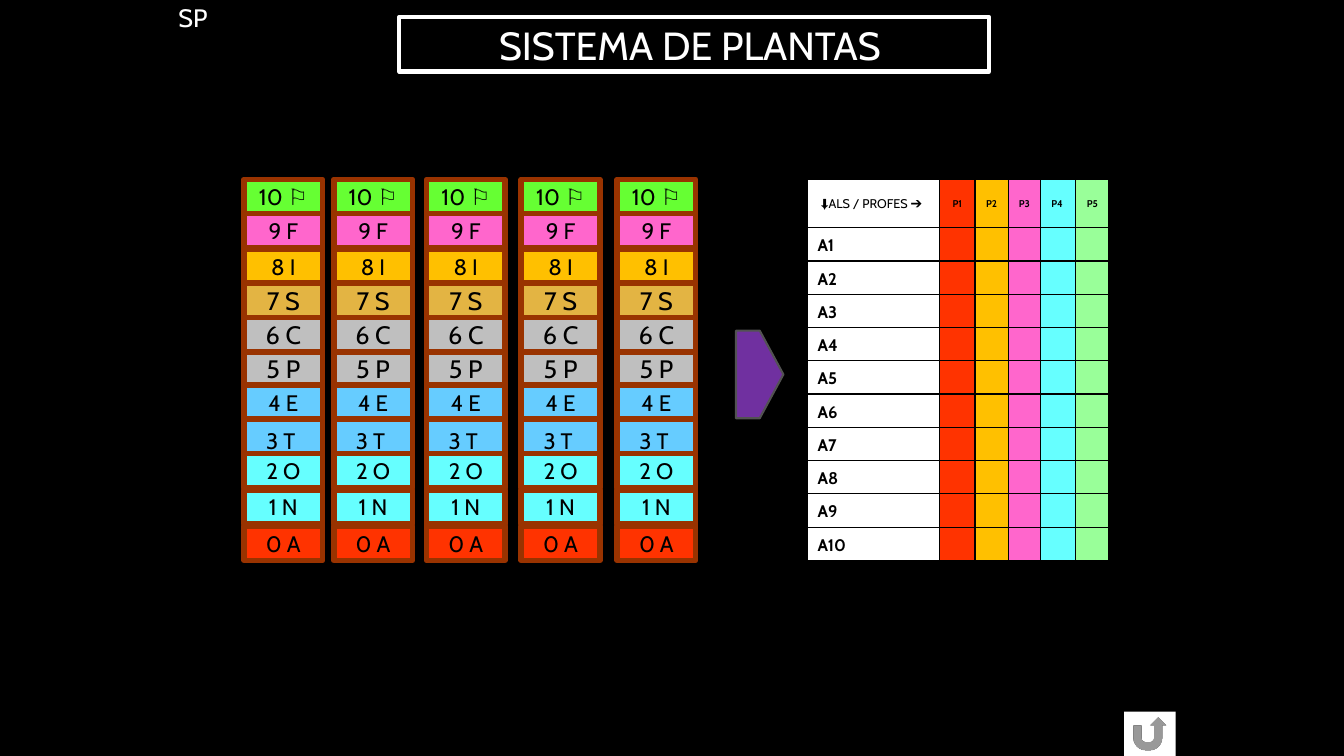
"""Build the slide with five level towers and the pupil and teacher table."""
from lxml.etree import SubElement
from pptx import Presentation
from pptx.dml.color import RGBColor
from pptx.enum.shapes import MSO_SHAPE as Shape
from pptx.enum.text import MSO_ANCHOR as Anchor, PP_ALIGN as Align
from pptx.oxml.ns import qn
from pptx.util import Inches, Pt

FONT = "Cabin"
BLACK = RGBColor(0x00, 0x00, 0x00)
WHITE = RGBColor(0xFF, 0xFF, 0xFF)
RED = RGBColor(0xFF, 0x33, 0x00)
AMBER = RGBColor(0xFF, 0xC0, 0x00)
PINK = RGBColor(0xFF, 0x66, 0xCC)
CYAN = RGBColor(0x66, 0xFF, 0xFF)
MINT = RGBColor(0x99, 0xFF, 0x99)
GREEN = RGBColor(0x66, 0xFF, 0x33)
GOLD = RGBColor(0xE3, 0xB4, 0x43)
SILVER = RGBColor(0xBF, 0xBF, 0xBF)
BLUE = RGBColor(0x66, 0xCC, 0xFF)
BROWN = RGBColor(0x99, 0x33, 0x00)
PURPLE = RGBColor(0x70, 0x30, 0xA0)
GRAY = RGBColor(0x52, 0x52, 0x52)

TOWER_LEFTS = [2.42, 3.31, 4.23, 5.17, 6.12]
LEVELS = [
    ("10 ⚐", 1.78, 0.34, 16, GREEN),
    ("9 F", 2.12, 0.34, 16, PINK),
    ("8 I", 2.47, 0.34, 16, AMBER),
    ("7 S", 2.81, 0.34, 18, GOLD),
    ("6 C", 3.15, 0.34, 18, SILVER),
    ("5 P", 3.49, 0.34, 18, SILVER),
    ("4 E", 3.82, 0.34, 16, BLUE),
    ("3 T ", 4.16, 0.43, 16, BLUE),
    ("2 O", 4.5, 0.34, 16, CYAN),
    ("1 N", 4.86, 0.34, 16, CYAN),
    ("0 A", 5.22, 0.34, 16, RED),
]
COLUMNS = [(1.31, WHITE), (0.35, RED), (0.33, AMBER), (0.32, PINK), (0.35, CYAN), (0.33, MINT)]
TEACHERS = ["P1", "P2", "P3", "P4 ", "P5 "]
PUPILS = 10


def style_text(frame, size, color, bold=False, align=Align.CENTER):
    for para in frame.paragraphs:
        para.alignment = align
        for span in para.runs:
            span.font.name = FONT
            span.font.size = Pt(size)
            span.font.bold = bold
            span.font.color.rgb = color


def add_box(shapes, kind, left, top, width, height, fill=None, line=None, weight=1):
    box = shapes.add_shape(kind, Inches(left), Inches(top), Inches(width), Inches(height))
    box.shadow.inherit = False
    if fill is None:
        box.fill.background()
    else:
        box.fill.solid()
        box.fill.fore_color.rgb = fill
    if line is None:
        box.line.fill.background()
    else:
        box.line.color.rgb = line
        box.line.width = Pt(weight)
    box.text_frame.vertical_anchor = Anchor.MIDDLE
    box.text_frame.word_wrap = False
    return box


deck = Presentation()
deck.slide_width = Inches(13.33)
deck.slide_height = Inches(7.5)
page = deck.slides.add_slide(deck.slide_layouts[5])
page.background.fill.solid()
page.background.fill.fore_color.rgb = BLACK

add_box(page.shapes, Shape.ACTION_BUTTON_RETURN, 11.15, 7.06, 0.51, 0.44, WHITE)

title = page.shapes.title
title.left, title.top = Inches(1.67), Inches(-0.02)
title.width, title.height = Inches(0.59), Inches(0.38)
title.text_frame.text = "SP"
title.text_frame.vertical_anchor = Anchor.MIDDLE
style_text(title.text_frame, 18, WHITE, align=Align.LEFT)

heading = add_box(page.shapes, Shape.RECTANGLE, 3.96, 0.17, 5.85, 0.54, line=WHITE, weight=3)
heading.text_frame.text = "SISTEMA DE PLANTAS "
style_text(heading.text_frame, 28, WHITE)

table = page.shapes.add_table(
    PUPILS + 1, len(COLUMNS), Inches(8.01), Inches(1.78), Inches(2.99), Inches(3.78)
).table
table.first_row = False
table.horz_banding = False
for row_number, row in enumerate(table.rows):
    row.height = Inches(0.33 if row_number else 0.48)
    for column_number, (width, color) in enumerate(COLUMNS):
        table.columns[column_number].width = Inches(width)
        cell = table.cell(row_number, column_number)
        cell.margin_left = cell.margin_right = Inches(0.1)
        cell.margin_top = cell.margin_bottom = Inches(0.05)
        cell.vertical_anchor = Anchor.BOTTOM if row_number else Anchor.MIDDLE
        properties = cell._tc.get_or_add_tcPr()
        for side in ("a:lnL", "a:lnR", "a:lnT", "a:lnB"):
            border = SubElement(properties, qn(side), w=str(Pt(1)))
            SubElement(SubElement(border, qn("a:solidFill")), qn("a:srgbClr"), val=str(BLACK))
        cell.fill.solid()
        cell.fill.fore_color.rgb = color
        para = cell.text_frame.paragraphs[0]
        if row_number and column_number:
            SubElement(para._p, qn("a:endParaRPr"), sz="1200")
        elif row_number:
            para.text = f"A{row_number}"
            style_text(cell.text_frame, 12, BLACK, bold=True, align=Align.LEFT)
        elif column_number:
            para.text = TEACHERS[column_number - 1]
            style_text(cell.text_frame, 7, BLACK, bold=True)
        else:
            para.text = " "
            para.add_run().text = "⬇ALS / PROFES ➔"
            style_text(cell.text_frame, 9, BLACK, align=Align.LEFT)
            para.runs[0].font.size = Pt(10)

for left in TOWER_LEFTS:
    tower = page.shapes.add_group_shape()
    for label, top, height, size, color in LEVELS:
        level = add_box(tower.shapes, Shape.RECTANGLE, left, top, 0.78, height, color, BROWN, 4)
        level.text_frame.text = label
        style_text(level.text_frame, size, BLACK)

add_box(page.shapes, Shape.PENTAGON, 7.3, 3.28, 0.47, 0.87, PURPLE, GRAY, 1.5)

deck.save("out.pptx")
